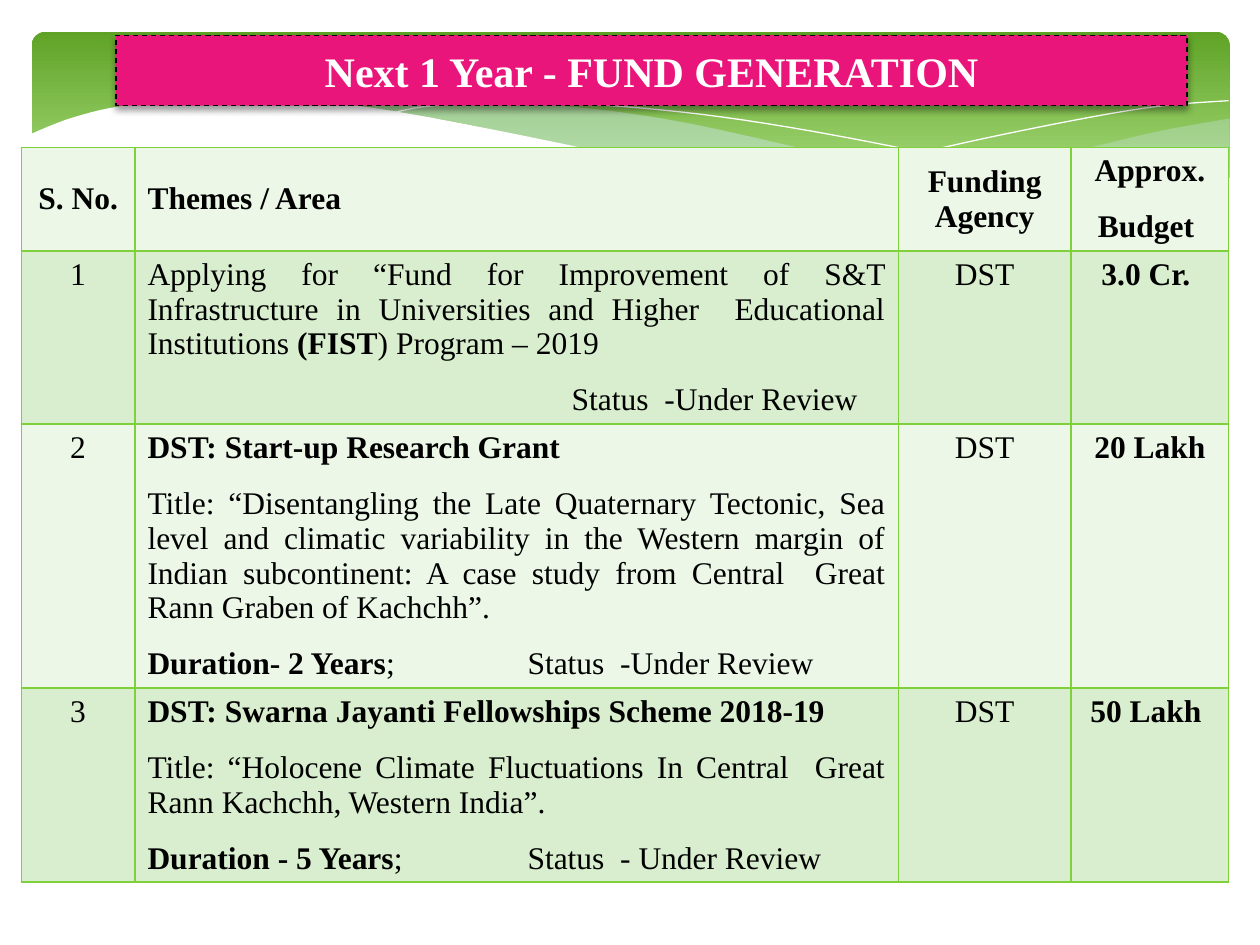
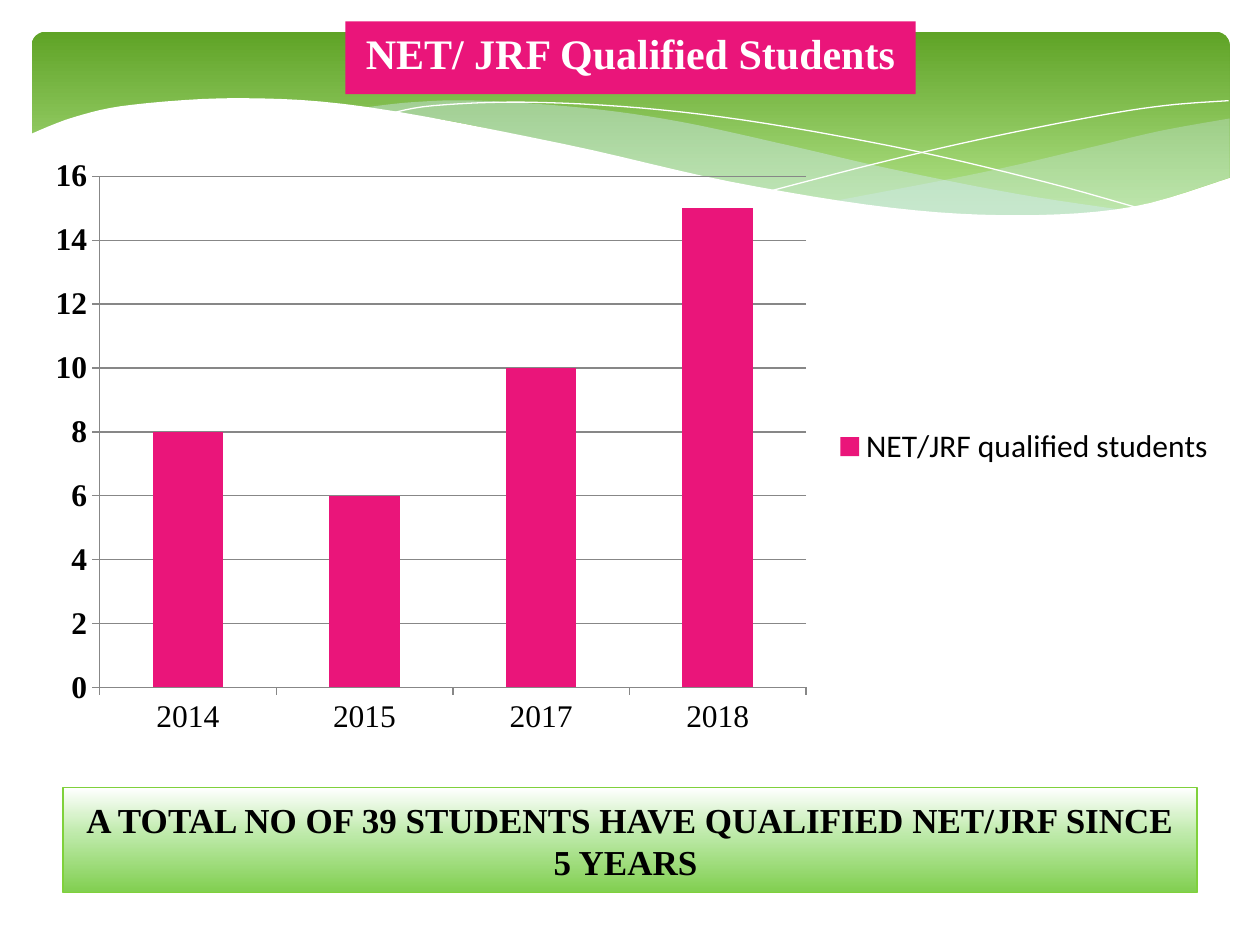
from copy import deepcopy
from dataclasses import dataclass

from lxml import etree
from pptx import Presentation
from pptx.chart.data import CategoryChartData
from pptx.dml.color import RGBColor
from pptx.enum.chart import XL_CHART_TYPE, XL_LEGEND_POSITION, XL_TICK_MARK
from pptx.enum.dml import MSO_LINE
from pptx.enum.shapes import MSO_SHAPE
from pptx.enum.text import MSO_ANCHOR, MSO_AUTO_SIZE, PP_ALIGN
from pptx.oxml.ns import qn
from pptx.util import Cm, Pt

LEFT, CENTER, JUSTIFY = PP_ALIGN.LEFT, PP_ALIGN.CENTER, PP_ALIGN.JUSTIFY
TOP, MIDDLE = MSO_ANCHOR.TOP, MSO_ANCHOR.MIDDLE
OUTSIDE = XL_TICK_MARK.OUTSIDE


@dataclass(frozen=True)
class Theme:
    pink: RGBColor = RGBColor(0xEA, 0x15, 0x7A)
    green: RGBColor = RGBColor(0x7F, 0xD1, 0x3B)
    sky: RGBColor = RGBColor(0xD6, 0xEC, 0xFF)
    white: RGBColor = RGBColor(0xFF, 0xFF, 0xFF)
    black: RGBColor = RGBColor(0, 0, 0)
    grey: RGBColor = RGBColor(0x87, 0x87, 0x87)
    row_light: RGBColor = RGBColor(0xEC, 0xF7, 0xE8)
    row_dark: RGBColor = RGBColor(0xD8, 0xEE, 0xCE)
    band: tuple = ((0, "5FA326"), (0.9, "B2E389"))
    box: tuple = ((0, "FFFFFF"), (0.44, "BEEAAA"), (1, "81CF50"))
    serif: str = "Times New Roman"
    sans: str = "Calibri"
    title: int = 24
    note: int = 20
    body: int = 18


T = Theme()


def add_text(tf, text, size=T.body, color=T.black, align=CENTER, anchor=TOP, gap=0):
    """Fill a text frame: one paragraph per line, *bold* between asterisks."""
    tf.word_wrap = True
    tf.vertical_anchor = anchor
    for i, line in enumerate(text.split("\n")):
        p = tf.paragraphs[0] if i == 0 else tf.add_paragraph()
        p.alignment = LEFT if "\t" in line else align
        p.space_before = p.space_after = Pt(gap)
        for j, part in enumerate(line.split("*")):
            if part:
                r = p.add_run()
                r.text = part
                r.font.name, r.font.size = T.serif, Pt(size)
                r.font.bold = j % 2 == 1
                r.font.color.rgb = color


def fill_gradient(sp, stops):
    sp.shadow.inherit = False
    sp.fill.gradient()
    sp.fill.gradient_angle = 270
    gs_list = sp.element.find(".//" + qn("a:gsLst"))
    for _ in stops[2:]:
        gs_list.append(deepcopy(gs_list[0]))
    for stop, (position, color) in zip(sp.fill.gradient_stops, stops):
        stop.position = position
        stop.color.rgb = RGBColor.from_string(color)


prs = Presentation()
prs.slide_width, prs.slide_height = Cm(25.4), Cm(19.05)
layout = prs.slide_layouts[5]
for ph in list(layout.placeholders):
    if ph.placeholder_format.idx >= 10:
        ph.element.getparent().remove(ph.element)
fund_slide, students_slide = (prs.slides.add_slide(layout) for _ in range(2))

# Shared backdrop: green band cut by waves, placed on the layout
band = fund_slide.shapes.add_shape(
    MSO_SHAPE.ROUNDED_RECTANGLE, Cm(0.64), Cm(0.64), Cm(24.15), Cm(3.96))
band.adjustments[0] = 0.07
fill_gradient(band, T.band)
band.line.fill.background()
backdrop = [band]

# Each wave: edges through which smooth curves run (cm), fill, opacity in percent
waves = [
    ([[(24.79, 2.39), (23.39, 2.64), (21.87, 3), (19.79, 3.48), (16.79, 4.06)],
      [(16.79, 4.06), (18.26, 4.24), (19.84, 4.37), (21.44, 4.34), (22.99, 4.14),
       (24.79, 3.58)]], T.sky, 29),
    ([[(22.68, 4.24), (20.5, 3.91), (17.93, 3.4), (15.98, 2.95), (13.74, 2.46),
       (11.81, 2.18), (9.65, 2.03), (8.33, 2.06), (7.26, 2.18)],
      [(7.26, 2.18), (9.19, 2.46), (11.4, 2.95), (14.38, 3.63), (16.89, 4.09),
       (19, 4.32), (21.03, 4.39), (22.68, 4.24)]], T.sky, 40),
    ([[(7.85, 2.29), (8.74, 2.13), (10.57, 2.06), (12.95, 2.18), (15.44, 2.49),
       (18.47, 3.05), (21.11, 3.68), (23.04, 4.22)]], None, 100),
    ([[(15.57, 3.84), (17.65, 3.3), (19.71, 2.82), (22, 2.36), (23.47, 2.13),
       (24.77, 2.03)]], None, 100),
    ([[(0.58, 2.72), (1.5, 2.36), (2.69, 2.11), (4.9, 1.98), (7.42, 2.16),
       (11.35, 2.9), (14.71, 3.66), (17.98, 4.19), (20.55, 4.34), (22.83, 4.17),
       (24.82, 3.58)],
      [(24.82, 5.69), (0.58, 5.69)]], T.white, 100),
]
STEPS = 6
for edges, color, opacity in waves:
    outline = []
    for edge in edges:
        padded = [edge[0], *edge, edge[-1]]
        for quad in zip(padded, padded[1:], padded[2:], padded[3:]):
            for t in (k / STEPS for k in range(STEPS)):
                # Catmull-Rom spline between the two middle points
                outline.append(tuple(
                    Cm(b + t * (c - a) / 2 + t * t * (2 * a - 5 * b + 4 * c - d) / 2
                       + t ** 3 * (3 * b - a - 3 * c + d) / 2)
                    for a, b, c, d in zip(*quad)))
        outline.append(tuple(Cm(v) for v in edge[-1]))
    builder = fund_slide.shapes.build_freeform(*outline[0])
    builder.add_line_segments(outline[1:], close=color is not None)
    wave = builder.convert_to_shape()
    wave.shadow.inherit = False
    if color is None:
        wave.fill.background()
        wave.line.color.rgb = T.white
        wave.line.width = Pt(0)
    else:
        wave.fill.solid()
        wave.fill.fore_color.rgb = color
        wave.line.fill.background()
        if opacity < 100:
            clr = wave.element.find(".//" + qn("a:srgbClr"))
            etree.SubElement(clr, qn("a:alpha"), val=str(opacity * 1000))
    backdrop.append(wave)
for sp in backdrop:
    layout.shapes.element.append(sp.element)

# Titles
titles = [
    (fund_slide, "*Next 1 Year - FUND GENERATION*", (2.34, 0.71, 21.59, 1.42), MIDDLE),
    (students_slide, "*NET/ JRF Qualified Students*", (6.96, 0.43, 11.5, 1.47), TOP),
]
for slide, text, box, anchor in titles:
    title = slide.shapes.title
    title.left, title.top, title.width, title.height = map(Cm, box)
    title.fill.solid()
    title.fill.fore_color.rgb = T.pink
    title.text_frame.auto_size = MSO_AUTO_SIZE.NONE
    add_text(title.text_frame, text, size=T.title, color=T.white, anchor=anchor)

fund_title = fund_slide.shapes.title
fund_title.line.color.rgb = T.black
fund_title.line.width = Pt(0.75)
fund_title.line.dash_style = MSO_LINE.DASH
effects = etree.SubElement(fund_title.element.spPr, qn("a:effectLst"))
shadow = etree.SubElement(effects, qn("a:outerShdw"), blurRad=str(Pt(4)),
                          dist=str(Pt(2)), dir="5400000", rotWithShape="0")
clr = etree.SubElement(shadow, qn("a:srgbClr"), val=str(T.black))
etree.SubElement(clr, qn("a:alpha"), val="38000")

# Funding table
rows = [
    ("*S. No.*", "*Themes / Area*", "*Funding Agency*", "*Approx.*\n*Budget *"),
    ("1",
     "Applying for “Fund for Improvement of S&T Infrastructure in Universities and "
     "Higher  Educational Institutions *(FIST*) Program – 2019\n"
     "\tStatus  -Under Review",
     "DST", "*3.0 Cr. *"),
    ("2",
     "*DST: Start-up Research Grant*\n"
     "Title: “Disentangling the Late Quaternary Tectonic, Sea level and climatic "
     "variability in the Western margin of Indian subcontinent: A case study from "
     "Central  Great Rann Graben of Kachchh”.\n"
     "*Duration- 2 Years*;\tStatus  -Under Review",
     "DST", "*20 Lakh*"),
    ("3",
     "*DST: Swarna Jayanti Fellowships Scheme 2018-19*\n"
     "Title: “Holocene Climate Fluctuations In Central  Great Rann Kachchh, "
     "Western India”.\n"
     "*Duration - 5 Years*;\tStatus  - Under Review",
     "DST", "*50 Lakh *"),
]
col_widths = [2.29, 15.39, 3.48, 3.18]
row_heights = [2.08, 3.48, 5.32, 3.91]
table = fund_slide.shapes.add_table(
    len(rows), len(col_widths), Cm(0.43), Cm(2.97),
    Cm(sum(col_widths)), Cm(sum(row_heights))).table
table.first_row = table.horz_banding = False
for col, width in zip(table.columns, col_widths):
    col.width = Cm(width)
for i, (row, height) in enumerate(zip(rows, row_heights)):
    table.rows[i].height = Cm(height)
    for j, text in enumerate(row):
        cell = table.cell(i, j)
        cell.fill.solid()
        cell.fill.fore_color.rgb = T.row_dark if i % 2 else T.row_light
        add_text(cell.text_frame, text, align=JUSTIFY if j == 1 else CENTER, gap=6)
        cell.vertical_anchor = TOP if i else MIDDLE
        for p in cell.text_frame.paragraphs:
            if "\t" in p.text:
                stop = 8.55 if p.text.startswith("\t") else 7.66
                tabs = etree.SubElement(p._p.get_or_add_pPr(), qn("a:tabLst"))
                etree.SubElement(tabs, qn("a:tab"), pos=str(Cm(stop)), algn="l")
        tc_pr = cell._tc.get_or_add_tcPr()
        for k, side in enumerate(("a:lnL", "a:lnR", "a:lnT", "a:lnB")):
            ln = etree.Element(qn(side), w=str(Pt(1)))
            solid = etree.SubElement(ln, qn("a:solidFill"))
            etree.SubElement(solid, qn("a:srgbClr"), val=str(T.green))
            tc_pr.insert(k, ln)

# Students chart
data = CategoryChartData()
data.categories = ["2014", "2015", "2017", "2018"]
data.add_series("NET/JRF qualified students", (8, 6, 10, 15))
chart = students_slide.shapes.add_chart(
    XL_CHART_TYPE.COLUMN_CLUSTERED, Cm(0.64), Cm(2.97), Cm(24.13), Cm(12.07), data).chart
chart.has_title = False
chart.font.name, chart.font.size = T.sans, Pt(T.body)
chart.font.color.rgb = T.black
chart.has_legend = True
chart.legend.position = XL_LEGEND_POSITION.RIGHT
chart.legend.include_in_layout = False
plot = chart.plots[0]
plot.gap_width = 150
plot.vary_by_categories = False
bars = plot.series[0].format.fill
bars.solid()
bars.fore_color.rgb = T.pink
years, counts = chart.category_axis, chart.value_axis
counts.minimum_scale, counts.maximum_scale, counts.major_unit = 0, 16, 2
counts.has_major_gridlines = True
for line in (years.format.line, counts.format.line, counts.major_gridlines.format.line):
    line.color.rgb = T.grey
    line.width = Pt(0.75)
for axis in (years, counts):
    axis.major_tick_mark = OUTSIDE
    font = axis.tick_labels.font
    font.name, font.size, font.bold = T.serif, Pt(T.body), axis is counts
    font.color.rgb = T.black

# Total
total = students_slide.shapes.add_shape(
    MSO_SHAPE.RECTANGLE, Cm(1.27), Cm(15.88), Cm(22.86), Cm(2.11))
fill_gradient(total, T.box)
total.line.color.rgb = T.green
total.line.width = Pt(0.75)
add_text(total.text_frame,
         "*A TOTAL NO OF 39 STUDENTS HAVE QUALIFIED NET/JRF SINCE 5 YEARS *",
         size=T.note, anchor=MIDDLE)

prs.save("out.pptx")
